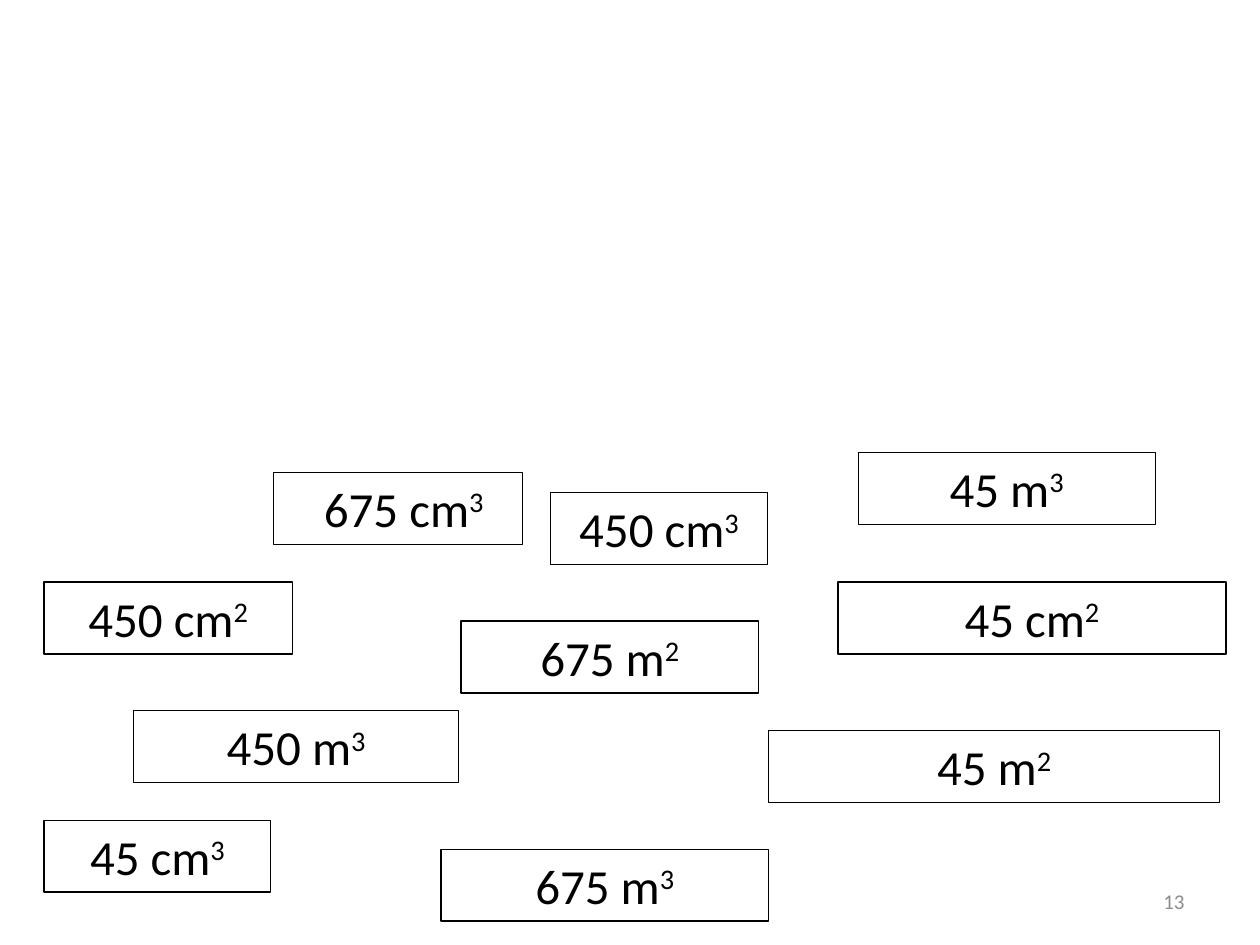
from dataclasses import dataclass

from pptx import Presentation
from pptx.dml.color import RGBColor
from pptx.enum.shapes import MSO_SHAPE
from pptx.enum.text import MSO_ANCHOR, MSO_AUTO_SIZE, PP_ALIGN
from pptx.slide import Slide
from pptx.util import Inches, Pt

RECTANGLE = MSO_SHAPE.RECTANGLE
TOP, MIDDLE = MSO_ANCHOR.TOP, MSO_ANCHOR.MIDDLE
CENTER, RIGHT = PP_ALIGN.CENTER, PP_ALIGN.RIGHT
GROW = MSO_AUTO_SIZE.SHAPE_TO_FIT_TEXT

CARD_HEIGHT = 0.57
ANSWERS = [
    ("45 cm", "3", 0.35, 6.51, 1.8),
    (" 675 cm", "3", 2.17, 3.75, 1.98),
    ("45 cm", "2", 6.65, 4.62, 3.08),
    ("450 cm", "2", 0.35, 4.62, 1.97),
    ("675 m", "3", 3.5, 6.74, 2.6),
    ("45 m", "3", 6.81, 3.59, 2.36),
    ("675 m", "2", 3.66, 4.93, 2.36),
    ("45 m", "2", 6.1, 5.8, 3.58),
    ("450 cm", "3", 4.37, 3.91, 1.72),
    ("450 m", "3", 1.06, 5.64, 2.58),
]


def rgb(value):
    return RGBColor.from_string(value)


@dataclass
class AnswerSlide:
    """Draws answer cards and the page number in one style."""

    slide: Slide
    font: str = "Calibri"
    ink: str = "000000"
    muted: str = "8C8C8C"

    def add_run(self, paragraph, text, size, color, superscript=False):
        run = paragraph.add_run()
        run.text = text
        run.font.name = self.font
        run.font.size = Pt(size)
        run.font.color.rgb = rgb(color)
        if superscript:
            run._r.get_or_add_rPr().set("baseline", "30000")

    def add_card(self, quantity, exponent, left, top, width, fill=None, line=0.75):
        card = self.slide.shapes.add_shape(
            RECTANGLE, Inches(left), Inches(top), Inches(width), Inches(CARD_HEIGHT))
        card.shadow.inherit = False
        if fill:
            card.fill.solid()
            card.fill.fore_color.rgb = rgb(fill)
        else:
            card.fill.background()
        card.line.color.rgb = rgb(self.ink)
        card.line.width = Pt(line)
        frame = card.text_frame
        frame.word_wrap = True
        frame.auto_size = GROW
        frame.vertical_anchor = TOP
        measure = frame.paragraphs[0]
        measure.alignment = CENTER
        self.add_run(measure, quantity, 28, self.ink)
        self.add_run(measure, exponent, 28, self.ink, superscript=True)

    def add_page_number(self, number, left, top, width, height):
        box = self.slide.shapes.add_textbox(
            Inches(left), Inches(top), Inches(width), Inches(height))
        frame = box.text_frame
        frame.word_wrap = True
        frame.vertical_anchor = MIDDLE
        paragraph = frame.paragraphs[0]
        paragraph.alignment = RIGHT
        self.add_run(paragraph, number, 12, self.muted)


def main():
    deck = Presentation()
    deck.slide_width, deck.slide_height = Inches(10), Inches(7.5)
    answers = AnswerSlide(deck.slides.add_slide(deck.slide_layouts[6]))
    for quantity, exponent, left, top, width in ANSWERS:
        filled = (quantity, exponent) == ("45 m", "3")
        style = {"fill": "FFFFFF", "line": 0.5} if filled else {}
        answers.add_card(quantity, exponent, left, top, width, **style)
    answers.add_page_number("13", 7.17, 6.95, 2.33, 0.4)
    deck.save("out.pptx")


if __name__ == "__main__":
    main()
